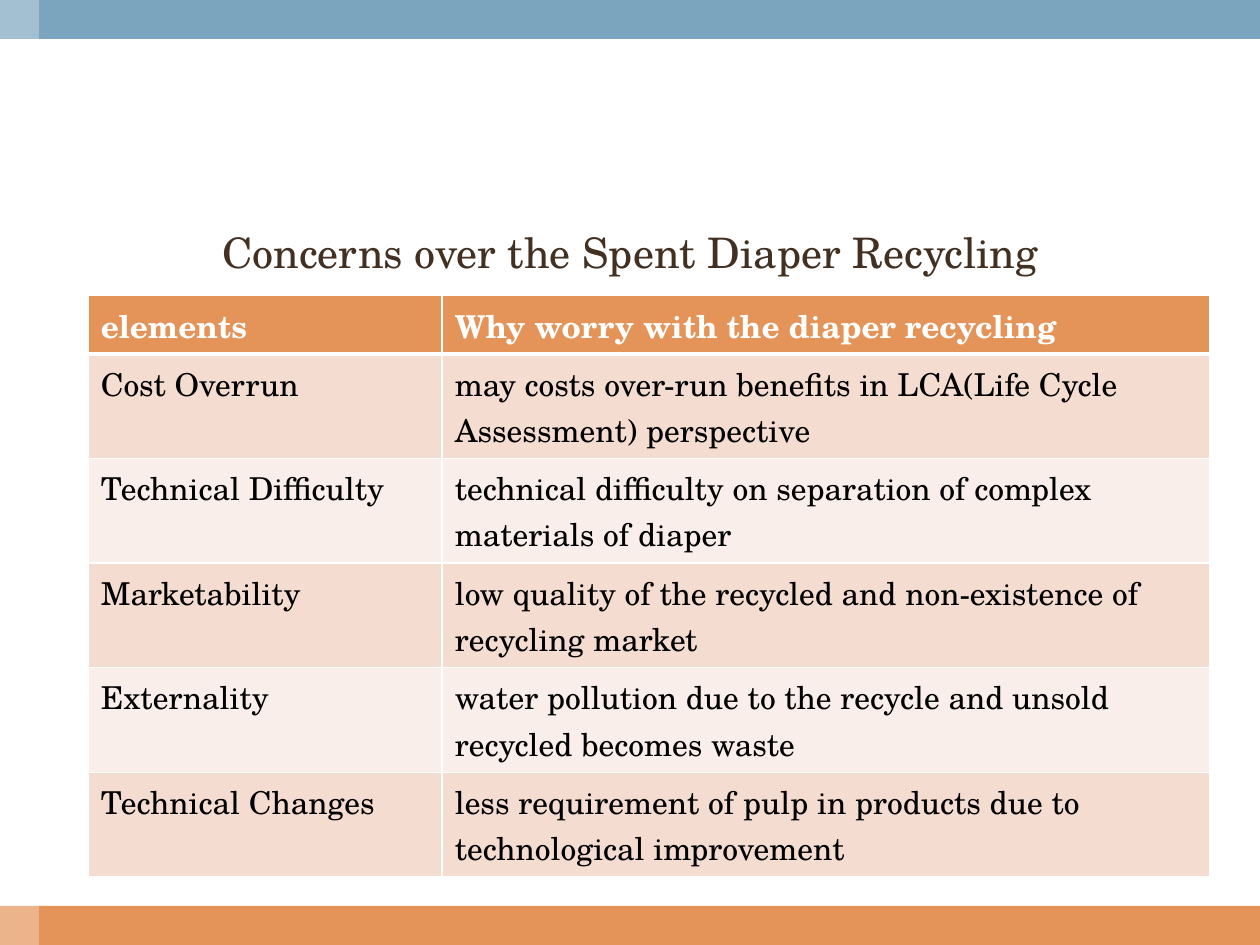
"""Build a slide with a table of concerns over diaper recycling."""
from lxml.etree import SubElement
from pptx import Presentation
from pptx.dml.color import RGBColor
from pptx.enum.shapes import MSO_SHAPE
from pptx.enum.text import PP_ALIGN
from pptx.oxml.ns import qn
from pptx.util import Inches, Pt

FONT = "TeX Gyre Schola"
ORANGE, BLUE, WHITE = "E49458", "7BA5BE", "FFFFFF"
BROWN, BLACK = "433021", "000000"
BANDS = ["FAEEEA", "F5DCD1"]
WIDE, HIGH, BAR = 10, 7.5, 0.31
COLS = [2.81, 6.09]
HEAD, ROW = 0.47, 0.83
TITLE = "Concerns over the Spent Diaper Recycling"
ROWS = [
    ("elements", "Why worry with the diaper recycling"),
    ("Cost Overrun", "may costs over-run benefits in LCA(Life Cycle Assessment) perspective"),
    ("Technical Difficulty", "technical difficulty on separation of complex materials of diaper"),
    ("Marketability", "low quality of the recycled and non-existence of recycling market"),
    ("Externality", "water pollution due to the recycle and unsold recycled becomes waste"),
    ("Technical Changes", "less requirement of pulp in products due to technological improvement"),
]
BARS = [
    (0, HIGH - BAR, WIDE, BAR, ORANGE, 100),
    (0, 0, WIDE, BAR, BLUE, 100),
    (0, 0, BAR, HIGH, WHITE, 30),
]


def paint(fill, color):
    fill.solid()
    fill.fore_color.rgb = RGBColor.from_string(color)


def write(frame, text, size, color, bold=False):
    frame.text = text
    font = frame.paragraphs[0].runs[0].font
    font.name, font.size, font.bold = FONT, Pt(size), bold
    font.color.rgb = RGBColor.from_string(color)


def add_bar(slide, left, top, width, height, color, alpha):
    box = [Inches(n) for n in (left, top, width, height)]
    bar = slide.shapes.add_shape(MSO_SHAPE.RECTANGLE, *box)
    bar.shadow.inherit = False
    bar.line.fill.background()
    paint(bar.fill, color)
    if alpha < 100:
        tint = bar.fill._xPr.find(".//" + qn("a:srgbClr"))
        SubElement(tint, qn("a:alpha"), val=str(alpha * 1000))


def add_edges(cell, row):
    props = cell._tc.get_or_add_tcPr()
    thick = {"T": 3 if row == 1 else 1, "B": 3 if row == 0 else 1}
    for side in "LRTB":
        width = Pt(thick.get(side, 1))
        line = SubElement(props, qn("a:ln" + side), w=str(width))
        fill = SubElement(line, qn("a:solidFill"))
        SubElement(fill, qn("a:srgbClr"), val=WHITE)


def add_title(slide):
    box = slide.shapes.add_textbox(Inches(0.5), Inches(1.75), Inches(9), Inches(0.59))
    box.text_frame.word_wrap = True
    write(box.text_frame, TITLE, 24, BROWN)
    box.text_frame.paragraphs[0].alignment = PP_ALIGN.CENTER


def add_grid(slide):
    high = HEAD + ROW * (len(ROWS) - 1)
    grid = slide.shapes.add_table(len(ROWS), len(COLS), Inches(0.7), Inches(2.34),
                                  Inches(sum(COLS)), Inches(high)).table
    for col, width in zip(grid.columns, COLS):
        col.width = Inches(width)
    for r, texts in enumerate(ROWS):
        grid.rows[r].height = Inches(ROW if r else HEAD)
        for c, text in enumerate(texts):
            cell = grid.cell(r, c)
            add_edges(cell, r)
            paint(cell.fill, BANDS[r % 2] if r else ORANGE)
            write(cell.text_frame, text, 18, BLACK if r else WHITE, r == 0)


def main():
    deck = Presentation()
    deck.slide_width, deck.slide_height = Inches(WIDE), Inches(HIGH)
    slide = deck.slides.add_slide(deck.slide_layouts[6])
    for bar in BARS:
        add_bar(slide, *bar)
    add_title(slide)
    add_grid(slide)
    deck.save("out.pptx")


if __name__ == "__main__":
    main()
